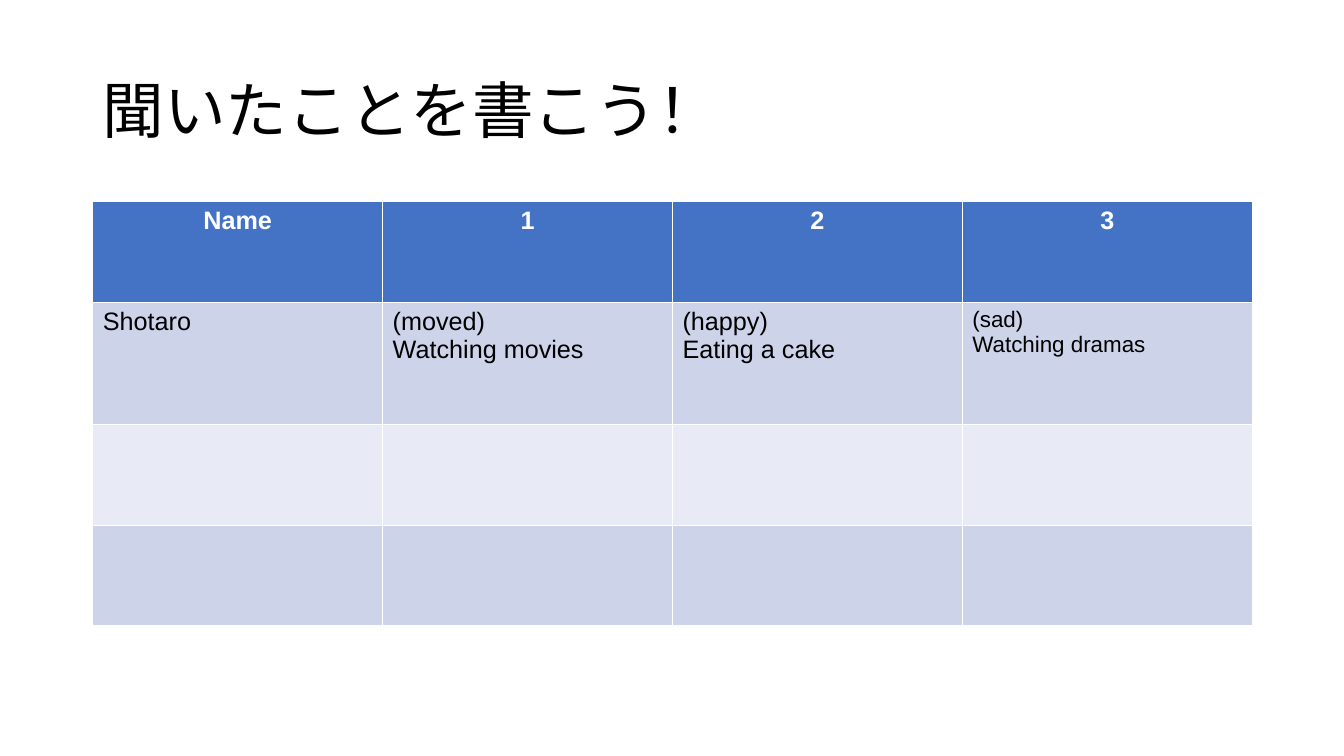
import pptx
import pptx.util
import pptx.dml.color
import pptx.enum.text

Inches = pptx.util.Inches
Pt = pptx.util.Pt
RGBColor = pptx.dml.color.RGBColor
Align = pptx.enum.text.PP_ALIGN
Anchor = pptx.enum.text.MSO_ANCHOR

BLACK = RGBColor(0x00, 0x00, 0x00)
WHITE = RGBColor(0xFF, 0xFF, 0xFF)
HEADER_BLUE = RGBColor(0x44, 0x72, 0xC4)
BAND_DARK = RGBColor(0xCD, 0xD4, 0xEA)
BAND_LIGHT = RGBColor(0xE8, 0xEB, 0xF5)

TITLE_FONT = {"name": "Arial", "size": Pt(44)}
HEADER_FONT = {"name": "Arial", "size": Pt(18), "bold": True}
BODY_FONT = {"name": "Arial", "size": Pt(18), "bold": False}
SMALL_FONT = {**BODY_FONT, "size": Pt(16)}

ROWS = [
    ["Name", "1", "2", "3"],
    ["Shotaro", "(moved)\nWatching movies", "(happy)\nEating a cake", "(sad)\nWatching dramas"],
    [""] * 4,
    [""] * 4,
]
ROW_HEIGHTS = [1, 1.21, 1, 1]


def write(frame, text, font, color, align=Align.LEFT):
    frame.text = text
    for para in frame.paragraphs:
        para.alignment = align
        for span in para.runs:
            for key, value in font.items():
                setattr(span.font, key, value)
            span.font.color.rgb = color


def add_title(page, left, top, width, height):
    box = page.shapes.add_textbox(Inches(left), Inches(top), Inches(width), Inches(height))
    frame = box.text_frame
    frame.word_wrap = True
    frame.vertical_anchor = Anchor.MIDDLE
    write(frame, "聞いたことを書こう！", TITLE_FONT, BLACK)
    frame.paragraphs[0].line_spacing = 0.9


def add_answer_table(page, left, top, width):
    table = page.shapes.add_table(
        len(ROWS), len(ROWS[0]), Inches(left), Inches(top),
        Inches(width), Inches(sum(ROW_HEIGHTS))).table
    for row, height in zip(table.rows, ROW_HEIGHTS):
        row.height = Inches(height)
    for row_index, texts in enumerate(ROWS):
        for column_index, text in enumerate(texts):
            cell = table.cell(row_index, column_index)
            cell.fill.solid()
            if row_index == 0:
                cell.fill.fore_color.rgb = HEADER_BLUE
                write(cell.text_frame, text, HEADER_FONT, WHITE, Align.CENTER)
            else:
                cell.fill.fore_color.rgb = BAND_DARK if row_index % 2 else BAND_LIGHT
                font = SMALL_FONT if column_index == 3 else BODY_FONT
                write(cell.text_frame, text, font, BLACK)


def main():
    deck = pptx.Presentation()
    deck.slide_width = Inches(13.33)
    deck.slide_height = Inches(7.5)
    page = deck.slides.add_slide(deck.slide_layouts[6])
    add_title(page, 0.92, 0.4, 11.5, 1.45)
    add_answer_table(page, 0.92, 2, 11.5)
    deck.save("out.pptx")


if __name__ == "__main__":
    main()
